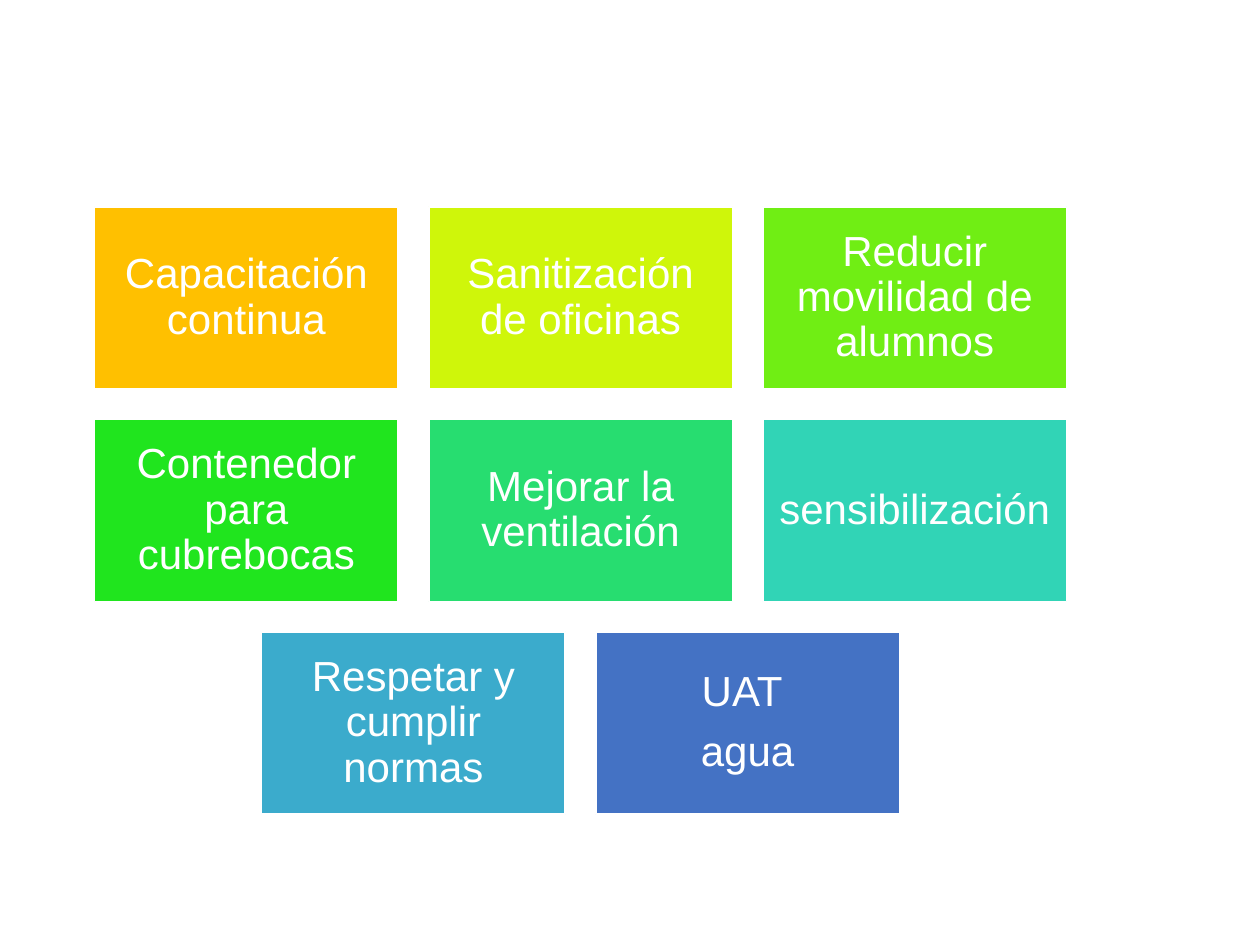
import pptx
import pptx.dml.color
import pptx.enum.shapes
import pptx.enum.text
import pptx.util

Pt = pptx.util.Pt

COLORS = {
    "white": "FFFFFF",
    "amber": "FFC000",
    "lime": "CFF60A",
    "light_green": "70EE14",
    "green": "20E51E",
    "emerald": "27DD70",
    "turquoise": "31D4B6",
    "sky": "3BABCC",
    "blue": "4472C4",
}

MEASURE_ROWS = [
    [
        (["Capacitación continua"], "amber"),
        (["Sanitización de oficinas"], "lime"),
        (["Reducir movilidad de alumnos"], "light_green"),
    ],
    [
        (["Contenedor para cubrebocas"], "green"),
        (["Mejorar la ventilación"], "emerald"),
        (["sensibilización"], "turquoise"),
    ],
    [
        (["Respetar y cumplir normas"], "sky"),
        (["UAT ", "agua"], "blue"),
    ],
]

GRID_LEFT, GRID_TOP = 54, 118.1
CARD_WIDTH, CARD_HEIGHT = 173.6, 104.16
GAP = CARD_WIDTH / 10
COLUMNS = 3


def color(name):
    return pptx.dml.color.RGBColor.from_string(COLORS[name])


def write_measure(frame, lines):
    frame.word_wrap = True
    frame.vertical_anchor = pptx.enum.text.MSO_ANCHOR.MIDDLE
    frame.margin_left = frame.margin_right = Pt(7.2)
    frame.margin_top = frame.margin_bottom = Pt(7.2)
    frame.text = "\n".join(lines)
    for index, paragraph in enumerate(frame.paragraphs):
        paragraph.alignment = pptx.enum.text.PP_ALIGN.CENTER
        paragraph.line_spacing = 0.9
        if index:
            paragraph.space_before = Pt(8.4)
        paragraph.font.name = "Arial"
        paragraph.font.size = Pt(24)
        paragraph.font.color.rgb = color("white")


def add_card(slide, left, top, lines, fill):
    card = slide.shapes.add_shape(
        pptx.enum.shapes.MSO_SHAPE.RECTANGLE,
        Pt(left), Pt(top), Pt(CARD_WIDTH), Pt(CARD_HEIGHT),
    )
    card.shadow.inherit = False
    card.fill.solid()
    card.fill.fore_color.rgb = color(fill)
    card.line.color.rgb = color("white")
    card.line.width = Pt(1)
    write_measure(card.text_frame, lines)


def add_card_row(slide, top, measures):
    pitch = CARD_WIDTH + GAP
    left = GRID_LEFT + (COLUMNS - len(measures)) * pitch / 2
    for column, (lines, fill) in enumerate(measures):
        add_card(slide, left + column * pitch, top, lines, fill)


def main():
    presentation = pptx.Presentation()
    presentation.slide_width = Pt(720)
    presentation.slide_height = Pt(540)
    slide = presentation.slides.add_slide(presentation.slide_layouts[6])
    for row, measures in enumerate(MEASURE_ROWS):
        add_card_row(slide, GRID_TOP + row * (CARD_HEIGHT + GAP), measures)
    presentation.save("out.pptx")


if __name__ == "__main__":
    main()
